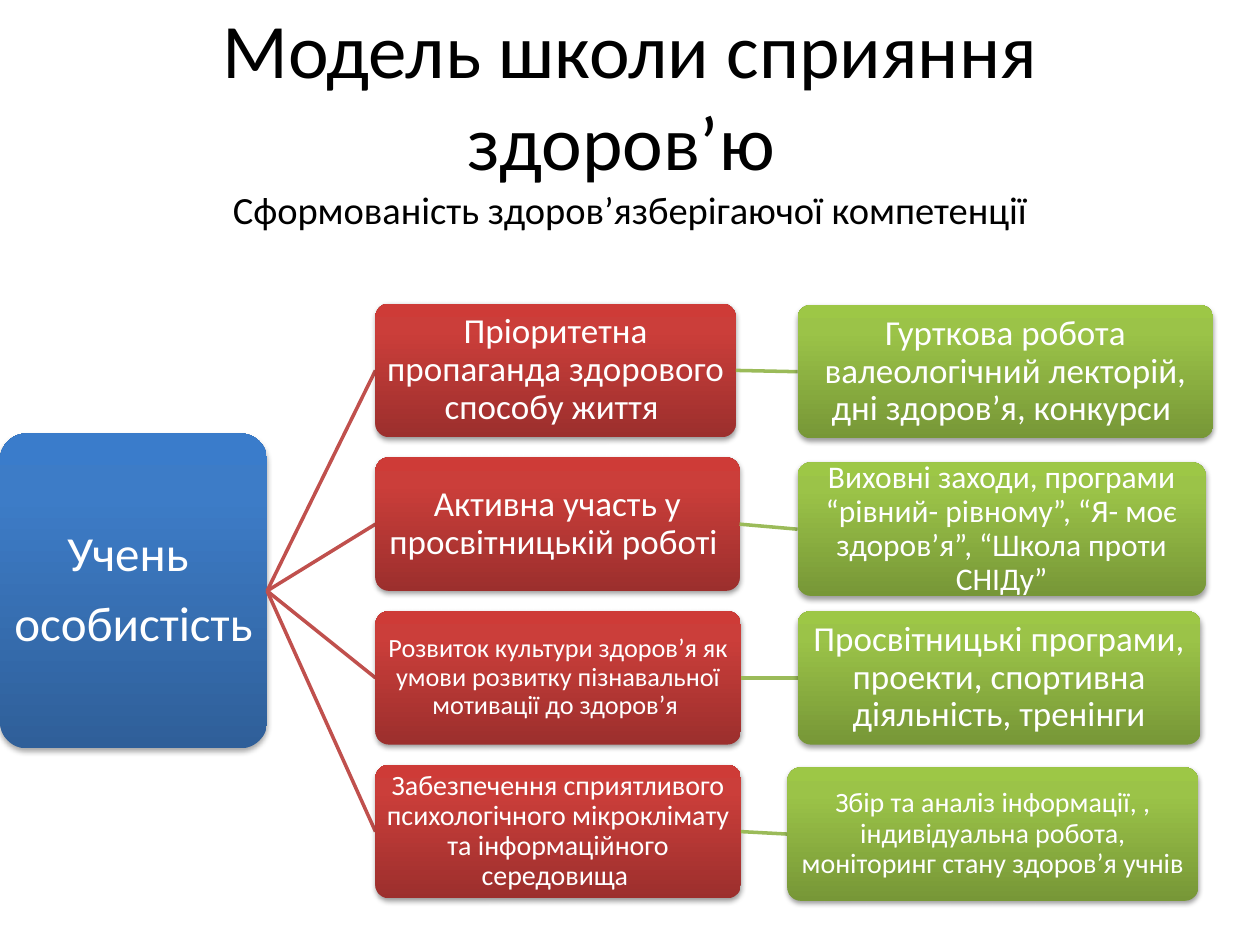
from copy import deepcopy
from typing import NamedTuple

from lxml import etree
from pptx import Presentation
from pptx.dml.color import RGBColor
from pptx.enum.shapes import MSO_CONNECTOR, MSO_SHAPE
from pptx.enum.text import MSO_ANCHOR, MSO_AUTO_SIZE, PP_ALIGN
from pptx.oxml.ns import qn
from pptx.util import Inches, Pt

CENTER = PP_ALIGN.CENTER
MIDDLE = MSO_ANCHOR.MIDDLE
ROUNDED = MSO_SHAPE.ROUNDED_RECTANGLE
STRAIGHT = MSO_CONNECTOR.STRAIGHT

FONT = "Calibri"
BLACK = RGBColor(0x00, 0x00, 0x00)
WHITE = RGBColor(0xFF, 0xFF, 0xFF)
RED_LINE = RGBColor(0xC0, 0x50, 0x4D)
GREEN_LINE = RGBColor(0x9B, 0xBB, 0x59)
# Gradients run from the bottom edge to the top edge
BLUE = (RGBColor(0x2F, 0x5F, 0x99), RGBColor(0x3D, 0x7C, 0xC7), RGBColor(0x3A, 0x7C, 0xCB))
RED = (RGBColor(0x9C, 0x2F, 0x2D), RGBColor(0xCB, 0x3E, 0x3A), RGBColor(0xCE, 0x3B, 0x37))
GREEN = (RGBColor(0x77, 0x97, 0x37), RGBColor(0x9B, 0xC3, 0x48), RGBColor(0x9D, 0xC7, 0x46))
STOPS = (0, 0.8, 1)

# Grid, in inches
TOP, PITCH, BOX_H = 2.41, 1.22, 1.06
AIM_X, WORK_X = 2.98, 6.33


class Box(NamedTuple):
    x: float
    y: float
    w: float
    h: float
    text: str
    size: int

    @property
    def left_mid(self) -> tuple[float, float]:
        return self.x, self.y + self.h / 2

    @property
    def right_mid(self) -> tuple[float, float]:
        return self.x + self.w, self.y + self.h / 2


class Row(NamedTuple):
    """One aim and the work serving it; dx and dy shift the work box off the grid."""
    aim: str
    aim_size: int
    aim_w: float
    work: str
    work_size: int
    work_w: float
    dx: float
    dy: float


ROWS = (
    Row("Пріоритетна пропаганда здорового способу життя ", 20, 2.86,
        "Гурткова робота валеологічний лекторій, дні здоров’я, конкурси ", 20, 3.3, 0, 0.01),
    Row("Активна участь у просвітницькій роботі ", 20, 2.89,
        "Виховні заходи, програми “рівний- рівному”, “Я- моє здоров’я”, “Школа проти СНІДу”",
        18, 3.24, 0, 0.04),
    Row("Розвиток культури здоров’я як умови розвитку пізнавальної мотивації до здоров’я ",
        15, 2.9,
        "Просвітницькі програми, проекти, спортивна діяльність, тренінги", 20, 3.2, 0, 0),
    Row("Забезпечення сприятливого психологічного мікроклімату та інформаційного середовища ",
        16, 2.9,
        "Збір та аналіз інформації, , індивідуальна робота, моніторинг стану здоров’я учнів",
        16, 3.26, -0.08, 0.02),
)


def add_run(p, text: str, *, size: float, color: RGBColor) -> None:
    r = p.add_run()
    r.text = text
    r.font.name = FONT
    r.font.size = Pt(size)
    r.font.color.rgb = color


def fill_gradient(sp, colors: tuple[RGBColor, ...]) -> None:
    sp.fill.gradient()
    sp.fill.gradient_angle = 90
    stop_list = sp._element.spPr.find(f".//{qn('a:gsLst')}")
    stop_list.append(deepcopy(stop_list[-1]))
    for stop, position, color in zip(sp.fill.gradient_stops, STOPS, colors):
        stop.position = position
        stop.color.rgb = color


def add_shadow(sp, alpha: int, distance: float) -> None:
    sp.shadow.inherit = False
    effects = sp._element.spPr.find(qn("a:effectLst"))
    shadow = etree.SubElement(effects, qn("a:outerShdw"), blurRad=str(Pt(3.1)),
                              dist=str(Pt(distance)), dir="5400000", rotWithShape="0")
    color = etree.SubElement(shadow, qn("a:srgbClr"), val=str(BLACK))
    etree.SubElement(color, qn("a:alpha"), val=str(alpha * 1000))


def add_box(slide, box: Box, colors: tuple[RGBColor, ...], *, inset: float = 0.01,
            alpha: int = 38, distance: float = 1.6) -> None:
    sp = slide.shapes.add_shape(ROUNDED, *map(Inches, box[:4]))
    sp.adjustments[0] = 0.1
    fill_gradient(sp, colors)
    sp.line.fill.background()
    add_shadow(sp, alpha, distance)
    tf = sp.text_frame
    tf.word_wrap = True
    tf.vertical_anchor = MIDDLE
    tf.margin_left = tf.margin_right = tf.margin_top = tf.margin_bottom = Inches(inset)
    for i, line in enumerate(box.text.split("\n")):
        p = tf.add_paragraph() if i else tf.paragraphs[0]
        p.alignment = CENTER
        p.line_spacing = 0.9
        p.space_after = Pt(0.35 * box.size)
        add_run(p, line, size=box.size, color=WHITE)


def add_link(slide, start: tuple[float, float], end: tuple[float, float],
             color: RGBColor) -> None:
    line = slide.shapes.add_connector(STRAIGHT, *map(Inches, start + end))
    line.line.color.rgb = color
    line.line.width = Pt(2)
    etree.SubElement(line._element.spPr, qn("a:effectLst"))


def add_title(slide) -> None:
    title = slide.shapes.title
    title.left, title.top, title.width, title.height = map(Inches, (0.5, 0.3, 9, 1.25))
    tf = title.text_frame
    tf.auto_size = MSO_AUTO_SIZE.NONE
    tf.vertical_anchor = MIDDLE
    p = tf.paragraphs[0]
    p.alignment = CENTER
    add_run(p, "Модель школи сприяння здоров’ю ", size=44, color=BLACK)
    p.add_line_break()
    add_run(p, "Сформованість здоров’язберігаючої компетенції", size=22, color=BLACK)


def main() -> None:
    prs = Presentation()
    prs.slide_width, prs.slide_height = Inches(10), Inches(7.5)
    slide = prs.slides.add_slide(prs.slide_layouts[5])
    add_title(slide)

    pupil = Box(0, 3.44, 2.12, 2.5, "Учень \nособистість", 28)
    add_box(slide, pupil, BLUE, inset=0.02, alpha=35, distance=1.8)
    for i, row in enumerate(ROWS):
        y = TOP + i * PITCH
        aim = Box(AIM_X, y, row.aim_w, BOX_H, row.aim, row.aim_size)
        work = Box(WORK_X + row.dx, y + row.dy, row.work_w, BOX_H, row.work, row.work_size)
        add_link(slide, pupil.right_mid, aim.left_mid, RED_LINE)
        add_box(slide, aim, RED)
        add_link(slide, aim.right_mid, work.left_mid, GREEN_LINE)
        add_box(slide, work, GREEN)

    prs.save("out.pptx")


if __name__ == "__main__":
    main()
